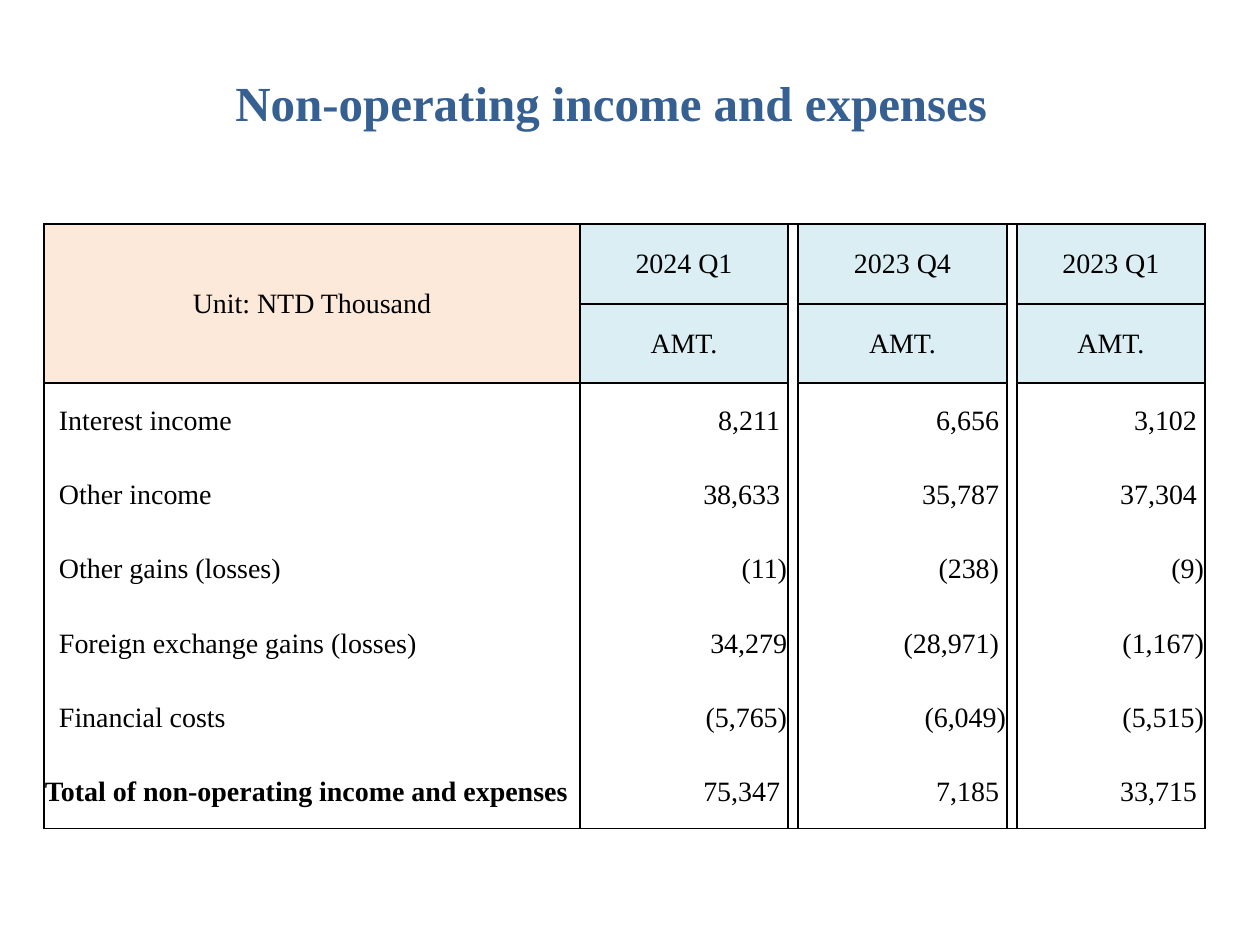
from dataclasses import dataclass

from lxml.etree import SubElement
from pptx import Presentation
from pptx.dml.color import RGBColor as RGB
from pptx.enum.text import MSO_ANCHOR as ANCHOR, PP_ALIGN as ALIGN
from pptx.oxml.ns import qn
from pptx.util import Emu, Pt


@dataclass(frozen=True)
class Theme:
    font: str = "Times New Roman"
    title_color: RGB = RGB(0x37, 0x60, 0x92)
    text_color: RGB = RGB(0, 0, 0)
    unit_fill: RGB = RGB(0xFD, 0xE9, 0xD9)
    period_fill: RGB = RGB(0xDB, 0xEE, 0xF3)
    border_color: str = "000000"
    border_width: Pt = Pt(1)
    title_size: Pt = Pt(28)
    table_size: Pt = Pt(16)


theme = Theme()
EMU_PER_PX = 914400 / 126


def px(length):
    return Emu(round(length * EMU_PER_PX))


def add_run(paragraph, text, size, color, bold=False):
    run = paragraph.add_run()
    run.text = text
    run.font.name = theme.font
    run.font.size = size
    run.font.bold = bold
    run.font.color.rgb = color


COLUMN_WIDTHS = [536, 208, 10, 209, 10, 188]
ROW_HEIGHTS = [80, 79] + [75, 74, 74] * 2
HEADER_ROWS = 2
LAST_ROW = len(ROW_HEIGHTS) - 1
GAP_COLUMNS = (2, 4)
ROWS = [
    ("Unit: NTD Thousand", "2024 Q1", "2023 Q4", "2023 Q1"),
    ("", "AMT.", "AMT.", "AMT."),
    ("Interest income", "8,211 ", "6,656 ", "3,102 "),
    ("Other income", "38,633 ", "35,787 ", "37,304 "),
    ("Other gains (losses)", "(11)", "(238) ", "(9)"),
    ("Foreign exchange gains (losses)", "34,279", "(28,971) ", "(1,167)"),
    ("Financial costs", "(5,765)", "(6,049)", "(5,515)"),
    ("Total of non-operating income and expenses", "75,347 ", "7,185 ", "33,715 "),
]

presentation = Presentation()
presentation.slide_width, presentation.slide_height = px(1260), px(945)
slide = presentation.slides.add_slide(presentation.slide_layouts[6])

title = slide.shapes.add_textbox(px(223), px(66), px(1022), px(121))
title.text_frame.word_wrap = True
add_run(title.text_frame.paragraphs[0], "Non-operating income and expenses",
        theme.title_size, theme.title_color, True)

table = slide.shapes.add_table(
    len(ROW_HEIGHTS), len(COLUMN_WIDTHS), px(44), px(224),
    px(sum(COLUMN_WIDTHS)), px(sum(ROW_HEIGHTS))).table
table.first_row = table.horz_banding = False
for column, width in zip(table.columns, COLUMN_WIDTHS):
    column.width = px(width)
for row, height in zip(table.rows, ROW_HEIGHTS):
    row.height = px(height)
table.cell(0, 0).merge(table.cell(1, 0))

for row_index, texts in enumerate(ROWS):
    is_header = row_index < HEADER_ROWS
    is_total = row_index == LAST_ROW
    for column_index in range(len(COLUMN_WIDTHS)):
        is_gap = column_index in GAP_COLUMNS
        is_label = column_index == 0
        cell = table.cell(row_index, column_index)
        cell.vertical_anchor = ANCHOR.MIDDLE
        cell.margin_left = cell.margin_right = cell.margin_top = px(1)
        cell.margin_bottom = 0

        sides = {"L", "R"}
        if row_index == 0 or (row_index <= HEADER_ROWS and not is_gap):
            sides.add("T")
        if is_total or (is_header and not is_gap):
            sides.add("B")
        properties = cell._tc.get_or_add_tcPr()
        for side in "LRTB":
            line = SubElement(properties, qn(f"a:ln{side}"), w=str(theme.border_width))
            if side in sides:
                solid = SubElement(line, qn("a:solidFill"))
                SubElement(solid, qn("a:srgbClr"), val=theme.border_color)
            else:
                SubElement(line, qn("a:noFill"))

        if is_header and not is_gap:
            cell.fill.solid()
            cell.fill.fore_color.rgb = theme.unit_fill if is_label else theme.period_fill
        else:
            cell.fill.background()

        text = "" if is_gap else texts[(column_index + 1) // 2]
        if not text:
            continue
        paragraph = cell.text_frame.paragraphs[0]
        if is_header:
            paragraph.alignment = ALIGN.CENTER
        elif is_label:
            paragraph.alignment = ALIGN.LEFT
            cell.margin_left = px(1 if is_total else 15)
        else:
            paragraph.alignment = ALIGN.RIGHT
        add_run(paragraph, text, theme.table_size, theme.text_color, is_total and is_label)

presentation.save("out.pptx")
